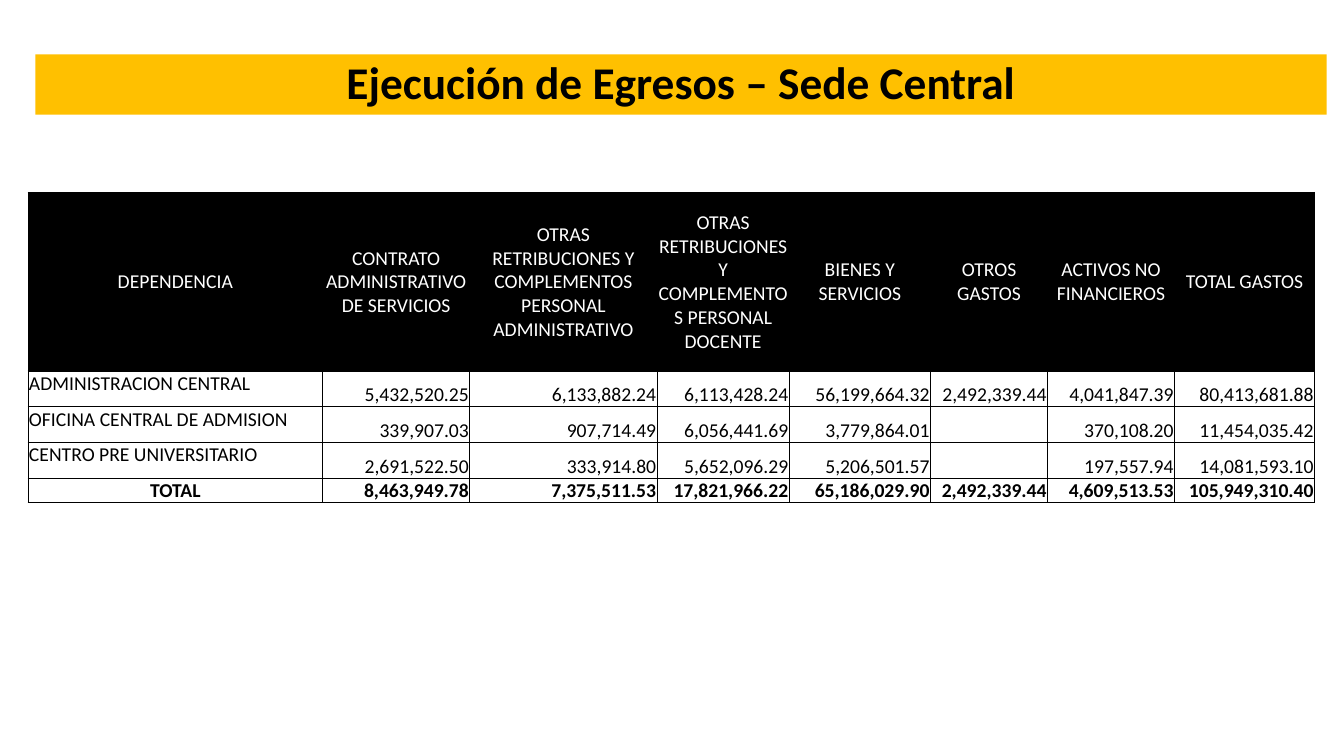
from lxml import etree
from pptx import Presentation
from pptx.dml import color
from pptx.enum import text
from pptx.oxml import ns
from pptx.util import Cm, Pt

FONT = "Calibri"
BLACK, WHITE, AMBER = "000000", "FFFFFF", "FFC000"
LEFT, CENTER, RIGHT = text.PP_ALIGN.LEFT, text.PP_ALIGN.CENTER, text.PP_ALIGN.RIGHT
TOP, MIDDLE, BOTTOM = text.MSO_ANCHOR.TOP, text.MSO_ANCHOR.MIDDLE, text.MSO_ANCHOR.BOTTOM

COLUMN_WIDTHS = [7.42, 3.71, 4.72, 3.33, 3.56, 2.95, 3.2, 3.53]
ROW_HEIGHTS = [4.5, 0.9, 0.9, 0.9, 0.3]
EXPENSES = [
    ["DEPENDENCIA", "CONTRATO ADMINISTRATIVO DE SERVICIOS",
     "OTRAS RETRIBUCIONES Y COMPLEMENTOS PERSONAL ADMINISTRATIVO",
     "OTRAS RETRIBUCIONES Y COMPLEMENTOS PERSONAL DOCENTE",
     "BIENES Y SERVICIOS", "OTROS GASTOS", "ACTIVOS NO FINANCIEROS", "TOTAL GASTOS"],
    ["ADMINISTRACION CENTRAL", "5,432,520.25", "6,133,882.24", "6,113,428.24",
     "56,199,664.32", "2,492,339.44", "4,041,847.39", "80,413,681.88"],
    ["OFICINA CENTRAL DE ADMISION", "339,907.03", "907,714.49", "6,056,441.69",
     "3,779,864.01", "", "370,108.20", "11,454,035.42"],
    ["CENTRO PRE UNIVERSITARIO", "2,691,522.50", "333,914.80", "5,652,096.29",
     "5,206,501.57", "", "197,557.94", "14,081,593.10"],
    ["TOTAL", "8,463,949.78", "7,375,511.53", "17,821,966.22",
     "65,186,029.90", "2,492,339.44", "4,609,513.53", "105,949,310.40"],
]


def set_fill(fill, hex_color):
    fill.solid()
    fill.fore_color.rgb = color.RGBColor.from_string(hex_color)


def add_run(paragraph, words, size, hex_color, bold=False):
    run = paragraph.add_run()
    run.text = words
    run.font.name = FONT
    run.font.size = Pt(size)
    run.font.bold = bold
    set_fill(run.font.fill, hex_color)


def add_borders(cell, hex_color, width):
    """Draw all four sides; the lines must come before the cell's fill."""
    properties = cell._tc.get_or_add_tcPr()
    for position, side in enumerate(("a:lnL", "a:lnR", "a:lnT", "a:lnB")):
        line = etree.Element(ns.qn(side), w=str(Pt(width)))
        solid = etree.SubElement(line, ns.qn("a:solidFill"))
        etree.SubElement(solid, ns.qn("a:srgbClr"), val=hex_color)
        properties.insert(position, line)


def format_title(title, words):
    title.left, title.top, title.width, title.height = Cm(0.89), Cm(1.37), Cm(32.54), Cm(1.52)
    set_fill(title.fill, AMBER)
    frame = title.text_frame
    frame.auto_size = text.MSO_AUTO_SIZE.NONE
    frame.vertical_anchor = MIDDLE
    paragraph = frame.paragraphs[0]
    paragraph.alignment = CENTER
    paragraph.line_spacing = 0.9
    add_run(paragraph, words, 32.4, BLACK, bold=True)


def fill_cell(cell, words, alignment, anchor, hex_color, bold):
    cell.margin_left = cell.margin_right = cell.margin_top = Cm(0.02)
    cell.margin_bottom = 0
    cell.vertical_anchor = anchor
    paragraph = cell.text_frame.paragraphs[0]
    paragraph.alignment = alignment
    if words:
        add_run(paragraph, words, 14, hex_color, bold)


def add_expense_table(slide):
    table = slide.shapes.add_table(
        len(EXPENSES), len(COLUMN_WIDTHS), Cm(0.71), Cm(4.85),
        Cm(sum(COLUMN_WIDTHS)), Cm(sum(ROW_HEIGHTS))).table
    table.horz_banding = False
    for column, width in zip(table.columns, COLUMN_WIDTHS):
        column.width = Cm(width)
    for row, height in zip(table.rows, ROW_HEIGHTS):
        row.height = Cm(height)

    last = len(EXPENSES) - 1
    for row_index, values in enumerate(EXPENSES):
        header, total = row_index == 0, row_index == last
        for column_index, words in enumerate(values):
            cell = table.cell(row_index, column_index)
            if header:
                alignment, anchor = CENTER, MIDDLE
            elif column_index == 0:
                alignment, anchor = (CENTER if total else LEFT), TOP
            else:
                alignment, anchor = RIGHT, BOTTOM
            fill_cell(cell, words, alignment, anchor, WHITE if header else BLACK, total)
            set_fill(cell.fill, BLACK if header else WHITE)
            add_borders(cell, BLACK, 1)


def main():
    presentation = Presentation()
    presentation.slide_width, presentation.slide_height = Cm(33.87), Cm(19.05)
    slide = presentation.slides.add_slide(presentation.slide_layouts.get_by_name("Title Only"))
    format_title(slide.shapes.title, "Ejecución de Egresos – Sede Central")
    add_expense_table(slide)
    presentation.save("out.pptx")


if __name__ == "__main__":
    main()
